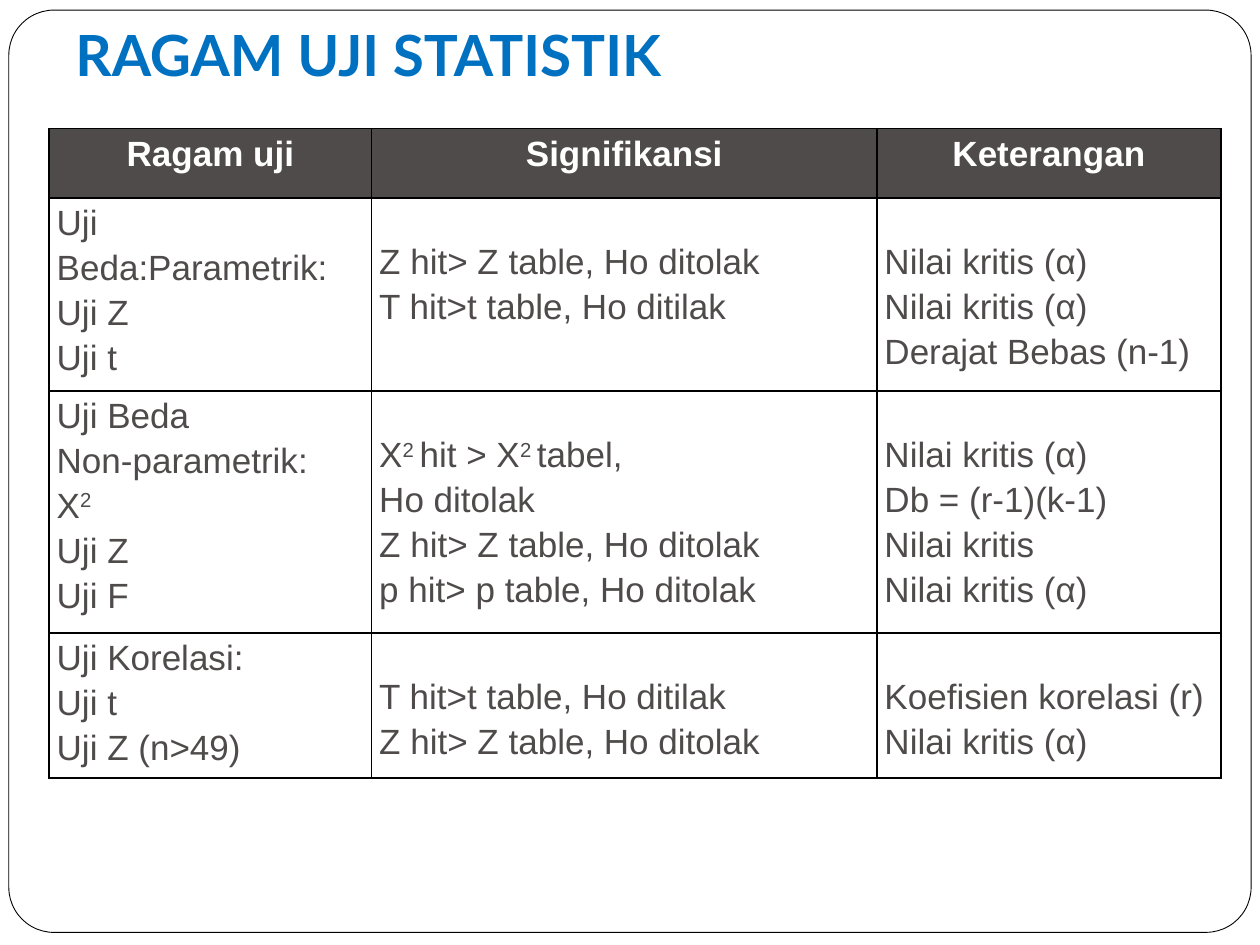
from lxml.etree import SubElement
from pptx import Presentation
from pptx.dml.color import RGBColor
from pptx.enum.shapes import MSO_SHAPE
from pptx.enum.text import MSO_ANCHOR, PP_ALIGN
from pptx.oxml.ns import qn
from pptx.util import Inches, Pt

COLORS = {"paper": "FFFFFF", "line": "000000", "title": "0070C0", "dark": "4F4B4B"}
COLUMN_WIDTHS = [2.56, 4.01, 2.73]
ROW_HEIGHTS = [0.55, 1.42, 1.78, 1.07]
HEADINGS = ["Ragam uji", "Signifikansi", "Keterangan"]
Z_TEST = "Z hit> Z table, Ho ditolak"
T_TEST = "T hit>t table, Ho ditilak"
CRITICAL = "Nilai kritis (α)"
TESTS = [
    [
        ["Uji Beda:Parametrik:", "Uji Z", "Uji t"],
        [Z_TEST, T_TEST],
        [CRITICAL, CRITICAL, "Derajat Bebas (n-1)"],
    ],
    [
        ["Uji Beda", "Non-parametrik:", "X^2", "Uji Z", "Uji F"],
        ["X^2 ^hit > X^2 ^tabel,", "Ho ditolak", Z_TEST, "p hit> p table, Ho ditolak"],
        [CRITICAL, "Db = (r-1)(k-1)", "Nilai kritis", CRITICAL],
    ],
    [
        ["Uji Korelasi:", "Uji t", "Uji Z (n>49)"],
        [T_TEST, Z_TEST],
        ["Koefisien korelasi (r)", CRITICAL],
    ],
]


def color(name):
    return RGBColor.from_string(COLORS[name])


def write(frame, lines, *, font="Arial", size=20, ink="dark", bold=False,
          align=PP_ALIGN.LEFT, spacing=1.15, before=0, after=0):
    for index, line in enumerate(lines):
        para = frame.add_paragraph() if index else frame.paragraphs[0]
        para.alignment = align
        para.line_spacing = spacing
        para.space_before, para.space_after = Pt(before), Pt(after)
        for part, text in enumerate(line.split("^")):
            span = para.add_run()
            span.text = text
            span.font.name = font
            span.font.size = Pt(size)
            span.font.bold = bold
            span.font.color.rgb = color(ink)
            if part % 2:
                span.font._element.set("baseline", "30000")


class SlideBuilder:
    cell_inset = Inches(0.06)
    first_line_drop = Inches(0.31)

    def __init__(self, page):
        self.page = page

    def frame(self, left, top, width, height):
        box = self.page.shapes.add_shape(
            MSO_SHAPE.ROUNDED_RECTANGLE, Inches(left), Inches(top), Inches(width), Inches(height))
        box.adjustments[0] = 0.049
        box.shadow.inherit = False
        box.fill.solid()
        box.fill.fore_color.rgb = color("paper")
        box.line.color.rgb = color("line")
        box.line.width = Pt(0.5)

    def title(self, text, left, top, width, height):
        box = self.page.shapes.add_textbox(Inches(left), Inches(top), Inches(width), Inches(height))
        frame = box.text_frame
        frame.word_wrap = True
        frame.vertical_anchor = MSO_ANCHOR.BOTTOM
        frame.margin_bottom = Inches(0.1)
        write(frame, [text], font="Lato", size=32.4, ink="title", bold=True, spacing=1.0)

    def borders(self, cell):
        properties = cell._tc.get_or_add_tcPr()
        for side in ("a:lnL", "a:lnR", "a:lnT", "a:lnB"):
            edge = SubElement(properties, qn(side), w=str(Pt(1)))
            fill = SubElement(edge, qn("a:solidFill"))
            SubElement(fill, qn("a:srgbClr"), val=COLORS["line"])

    def cell(self, cell, lines, fill, drop=0, **style):
        cell.margin_left = cell.margin_right = self.cell_inset
        cell.margin_top, cell.margin_bottom = drop, 0
        self.borders(cell)
        cell.fill.solid()
        cell.fill.fore_color.rgb = color(fill)
        write(cell.text_frame, lines, **style)

    def table(self, left, top):
        table = self.page.shapes.add_table(
            len(ROW_HEIGHTS), len(COLUMN_WIDTHS), Inches(left), Inches(top),
            Inches(sum(COLUMN_WIDTHS)), Inches(sum(ROW_HEIGHTS))).table
        for column, width in zip(table.columns, COLUMN_WIDTHS):
            column.width = Inches(width)
        for row, height in zip(table.rows, ROW_HEIGHTS):
            row.height = Inches(height)
        for column, heading in enumerate(HEADINGS):
            self.cell(table.cell(0, column), [heading], "dark", ink="paper", bold=True,
                      align=PP_ALIGN.CENTER, before=6, after=3)
        for row, tests in enumerate(TESTS, start=1):
            for column, lines in enumerate(tests):
                drop = self.first_line_drop if column else 0
                self.cell(table.cell(row, column), lines, "paper", drop=drop)


def main():
    deck = Presentation()
    deck.slide_width, deck.slide_height = Inches(10), Inches(7.5)
    builder = SlideBuilder(deck.slides.add_slide(deck.slide_layouts[6]))
    builder.frame(0.07, 0.08, 9.86, 7.32)
    builder.title("RAGAM UJI STATISTIK", 0.5, 0.16, 9, 0.64)
    builder.table(0.39, 1.02)
    deck.save("out.pptx")


if __name__ == "__main__":
    main()
